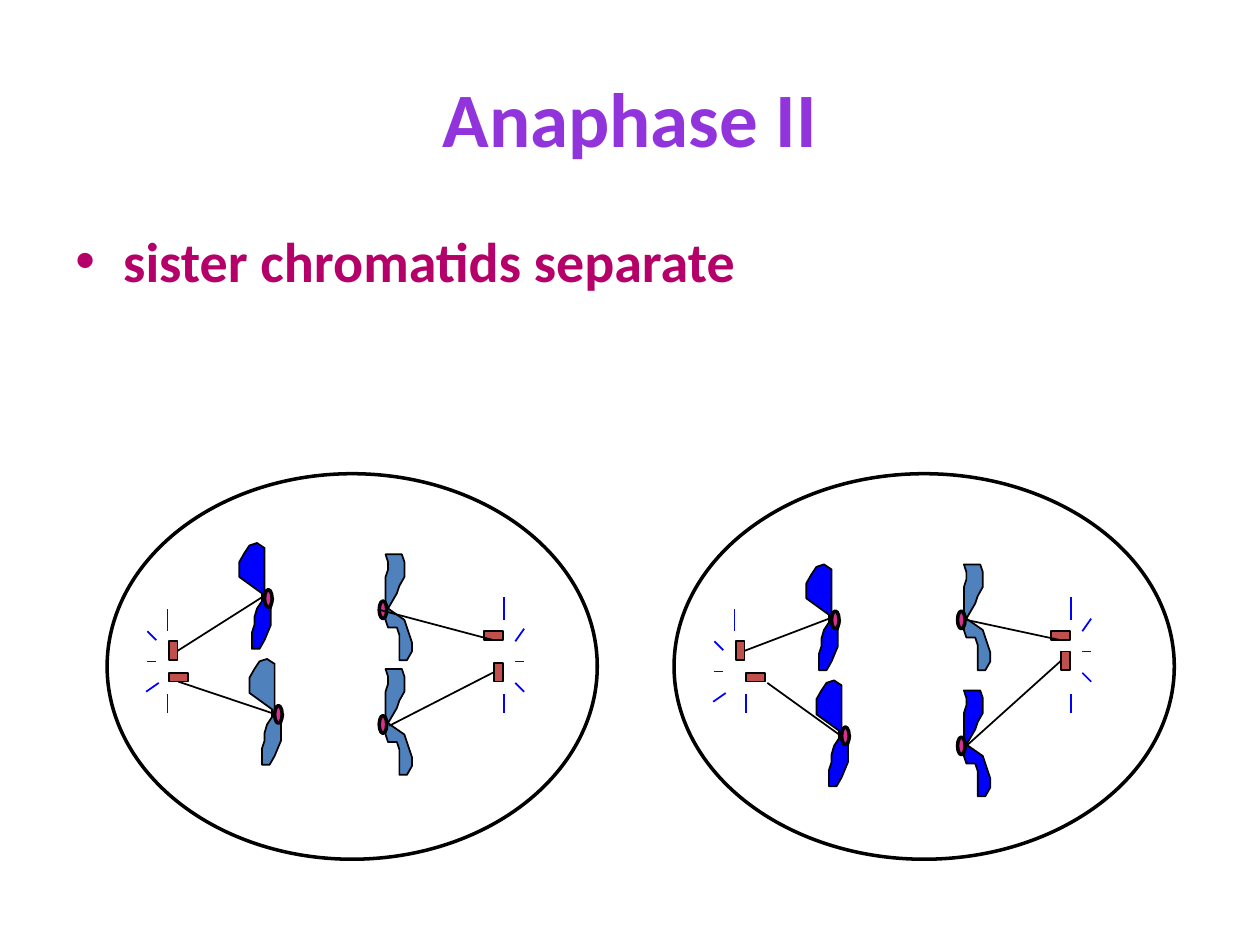
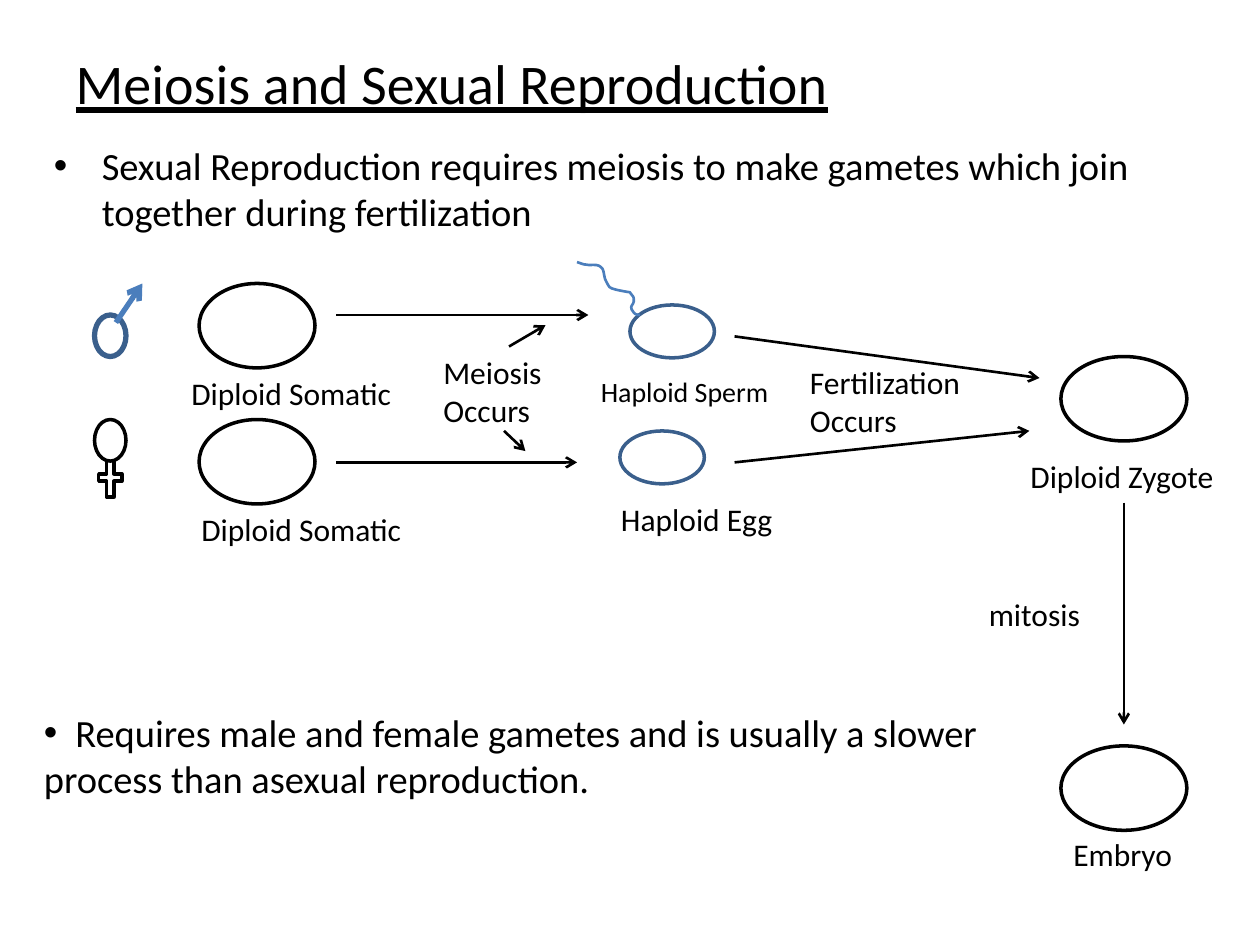
import pptx
import pptx.util
import pptx.dml.color
import pptx.enum.shapes
import pptx.enum.text
import pptx.oxml
import pptx.oxml.ns
import lxml.etree

Inches = pptx.util.Inches
Pt = pptx.util.Pt
Rgb = pptx.dml.color.RGBColor.from_string
Kind = pptx.enum.shapes.MSO_SHAPE
Align = pptx.enum.text.PP_ALIGN
qn = pptx.oxml.ns.qn
FONT = "Calibri"
HUES = {
    "ink": "000000", "paper": "FFFFFF", "title": "9234DB", "point": "B50069",
    "blue": "0000FF", "steel": "4F81BD", "rod": "C0504D", "knot": "D93192",
    "ring": "3A5F8C", "tail": "4B7EBC",
}


def paint(shape, fill, hue, width):
    shape.shadow.inherit = False
    if fill:
        shape.fill.solid()
        shape.fill.fore_color.rgb = Rgb(HUES[fill])
    else:
        shape.fill.background()
    shape.line.color.rgb = Rgb(HUES[hue])
    shape.line.width = Pt(width)


def link(slide, ends, hue, width, arrow=False):
    line = slide.shapes.add_connector(
        pptx.enum.shapes.MSO_CONNECTOR.STRAIGHT, *map(Inches, ends))
    line.line.color.rgb = Rgb(HUES[hue])
    line.line.width = Pt(width)
    props = line._element.spPr
    if arrow:
        head = lxml.etree.SubElement(props.find(qn("a:ln")), qn("a:tailEnd"))
        head.set("type", "arrow")
    lxml.etree.SubElement(props, qn("a:effectLst"))
    return line


deck = pptx.Presentation()
deck.slide_width, deck.slide_height = Inches(10), Inches(7.5)
titles = [
    ("Anaphase II", 1.25, 44, "title", True, False, Align.CENTER),
    ("Meiosis and Sexual Reproduction", 0.7, 32, "ink", False, True, Align.LEFT),
]
slides = []
for words, height, size, hue, bold, under, align in titles:
    slide = deck.slides.add_slide(deck.slide_layouts[5])
    title = slide.shapes.title
    title.left, title.top = Inches(0.5), Inches(0.3)
    title.width, title.height = Inches(9), Inches(height)
    title.text_frame.text = words
    title.text_frame.vertical_anchor = pptx.enum.text.MSO_ANCHOR.MIDDLE
    para = title.text_frame.paragraphs[0]
    para.alignment = align
    para.font.name, para.font.size = FONT, Pt(size)
    para.font.bold, para.font.underline = bold, under
    para.font.color.rgb = Rgb(HUES[hue])
    slides.append(slide)
split, cycle = slides

left_arm = [
    (0.27, 0.44), (0.2, 0.42), (0.2, 0.04), (0.14, 0), (0.08, 0.02), (0.04, 0.08),
    (0, 0.15), (0, 0.27), (0.18, 0.4), (0.18, 0.46), (0.14, 0.52), (0.12, 0.59),
    (0.12, 0.65), (0.1, 0.71), (0.1, 0.84), (0.16, 0.84), (0.2, 0.77),
    (0.25, 0.65), (0.25, 0.52),
]
right_arm = [
    (0.02, 0.43), (0, 0.37), (0, 0.18), (0.02, 0.12), (0.02, 0.06), (0, 0),
    (0.13, 0), (0.15, 0.06), (0.15, 0.18), (0.11, 0.25), (0.09, 0.31),
    (0.02, 0.43), (0.15, 0.52), (0.17, 0.58), (0.21, 0.7), (0.21, 0.77),
    (0.17, 0.84), (0.11, 0.84), (0.11, 0.64), (0.09, 0.58), (0.02, 0.58),
    (0, 0.52), (0, 0.45),
]
strands = [
    (1.98, 5.23, left_arm, 0.2, "steel"), (3.06, 5.31, right_arm, -0.05, "steel"),
    (6.4, 4.48, left_arm, 0.2, "blue"), (7.65, 4.48, right_arm, -0.05, "steel"),
    (1.9, 4.31, left_arm, 0.2, "blue"), (3.06, 4.4, right_arm, -0.05, "steel"),
    (6.48, 5.4, left_arm, 0.2, "blue"), (7.65, 5.48, right_arm, -0.05, "blue"),
]
for x, y, arm, shift, hue in strands:
    spots = [(Inches(x + dx), Inches(y + dy)) for dx, dy in arm]
    form = split.shapes.build_freeform(*spots[0])
    form.add_line_segments(spots[1:], close=True)
    paint(form.convert_to_shape(), hue, "ink", 1)
    knot = split.shapes.add_shape(
        Kind.OVAL, *map(Inches, (x + shift, y + 0.37, 0.06, 0.14)))
    paint(knot, "knot", "ink", 2)

for x, width in [(0.85, 3.89), (5.35, 3.97)]:
    cell = split.shapes.add_shape(Kind.OVAL, *map(Inches, (x, 3.76, width, 3.06)))
    paint(cell, None, "ink", 2)

west = [(-0.07, 0.17, -0.17, 0.24), (-0.16, 0, -0.09, 0), (-0.16, -0.24, -0.09, -0.17)]
east = [(0.09, -0.16, 0.16, -0.26), (0.09, 0, 0.16, 0), (0.09, 0.17, 0.16, 0.24)]
poles = [
    (1.33, 5.25, 5.01, 1.33, west), (4, 5.25, 4.92, 4, east),
    (5.83, 5.33, 5.01, 5.92, west), (8.5, 5.17, 4.92, 8.5, east),
]
for x, y, top, foot, fan in poles:
    rays = [(x + a, y + b, x + c, y + d) for a, b, c, d in fan]
    rays += [(x, top, x, top - 0.18), (foot, 5.51, foot, 5.66)]
    for ray in rays:
        link(split, ray, "blue", 1)

tall, flat = (0.07, 0.15), (0.15, 0.07)
rods = [
    (1.34, 5.09, tall, 3, (1.42, 5.17, 2.08, 4.74)),
    (1.34, 5.34, flat, 2, (1.42, 5.42, 2.16, 5.66)),
    (3.84, 5.01, flat, 2, (3.91, 5.08, 3.01, 4.84)),
    (3.92, 5.26, tall, 1, (3.91, 5.33, 3.09, 5.76)),
    (5.92, 5.34, flat, None, (6.09, 5.42, 6.66, 5.83)),
    (5.84, 5.09, tall, 3, (5.92, 5.17, 6.58, 4.91)),
    (8.34, 5.01, flat, 2, (8.41, 5.08, 7.67, 4.92)),
    (8.42, 5.17, tall, 1, (8.41, 5.24, 7.67, 5.92)),
]
for x, y, size, side, ends in rods:
    rod = split.shapes.add_shape(Kind.RECTANGLE, *map(Inches, (x, y, *size)))
    paint(rod, "rod", "ink", 1)
    fiber = link(split, ends, "ink", 1)
    if side is not None:
        fiber.begin_connect(rod, side)

cells = [
    (Kind.OVAL, (0.75, 2.5, 0.25, 0.33), "ring", 3),
    (Kind.MATH_PLUS, (0.75, 3.58, 0.25, 0.42), "ink", 2),
    (Kind.OVAL, (0.75, 3.33, 0.25, 0.33), "ink", 2),
    (Kind.OVAL, (1.58, 2.25, 0.92, 0.67), "ink", 2),
    (Kind.OVAL, (1.58, 3.33, 0.92, 0.67), "ink", 2),
    (Kind.OVAL, (5, 2.42, 0.67, 0.42), "ring", 2),
    (Kind.OVAL, (4.92, 3.42, 0.67, 0.42), "ring", 2),
    (Kind.OVAL, (8.42, 2.83, 1, 0.67), "ink", 2),
    (Kind.OVAL, (8.42, 5.92, 1, 0.67), "ink", 2),
]
for kind, box, hue, width in cells:
    paint(cycle.shapes.add_shape(kind, *map(Inches, box)), "paper", hue, width)

curves = [
    ((4.61, 2.09), (4.63, 2.1), (4.65, 2.1)),
    ((4.69, 2.11), (4.74, 2.09), (4.77, 2.12)),
    ((4.8, 2.14), (4.79, 2.2), (4.81, 2.23)),
    ((4.82, 2.25), (4.83, 2.27), (4.84, 2.28)),
    ((4.86, 2.3), (5, 2.32), (5, 2.32)),
    ((5.01, 2.34), (5.03, 2.35), (5.03, 2.37)),
    ((5.04, 2.43), (4.98, 2.42), (5.03, 2.48)),
    ((5.04, 2.5), (5.08, 2.5), (5.08, 2.5)),
]
start = (4.58, 2.08)
form = cycle.shapes.build_freeform(*map(Inches, start))
steps = 6
for one, two, end in curves:
    spots = []
    for step in range(1, steps + 1):
        t = step / steps
        u = 1 - t
        spots.append([
            Inches(u**3 * a + 3 * u * u * t * b + 3 * u * t * t * c + t**3 * d)
            for a, b, c, d in zip(start, one, two, end)])
    form.add_line_segments(spots, close=False)
    start = end
paint(form.convert_to_shape(), None, "tail", 1.5)

link(cycle, (0.92, 2.56, 1.13, 2.25), "tail", 3, True)
arrows = [
    (2.67, 2.5, 4.67, 2.5), (2.67, 3.67, 4.58, 3.67), (4.04, 2.75, 4.33, 2.58),
    (4, 3.42, 4.17, 3.58), (5.83, 2.67, 8.25, 3), (5.83, 3.67, 8.17, 3.42),
    (8.92, 3.99, 8.92, 5.75),
]
for ends in arrows:
    link(cycle, ends, "ink", 1.5, True)

labels = [
    ("Diploid Somatic", (1.42, 2.92, 1.92, 0.4), 18),
    ("Diploid Somatic", (1.5, 4, 1.92, 0.4), 18),
    ("Meiosis Occurs", (3.42, 2.75, 1.25, 0.71), 18),
    ("Haploid Sperm", (4.67, 2.92, 1.58, 0.37), 16),
    ("Haploid Egg", (4.83, 3.92, 1.42, 0.4), 18),
    ("Fertilization Occurs", (6.33, 2.83, 1.75, 0.71), 18),
    ("Diploid Zygote", (8.08, 3.58, 1.67, 0.4), 18),
    ("mitosis", (7.75, 4.67, 1, 0.4), 18),
    ("Embryo", (8.42, 6.58, 0.99, 0.4), 18),
]
texts = [(cycle, *label, "ink", None) for label in labels] + [
    (split, "sister chromatids separate", (0.5, 1.75, 9, 4.95), 32, "point", 0.38),
    (cycle, "Sexual Reproduction requires meiosis to make gametes which join "
     "together during fertilization", (0.33, 1.08, 9.25, 0.83), 22, "ink", 0.38),
    (cycle, "\tRequires male and female gametes and is usually a slower "
     "process than asexual reproduction.", (0.25, 5.58, 8.42, 0.84), 22, "ink", 0),
]
for slide, words, box, size, hue, hang in texts:
    frame = slide.shapes.add_textbox(*map(Inches, box)).text_frame
    frame.word_wrap = words != "Embryo"
    frame.text = words
    para = frame.paragraphs[0]
    para.font.name, para.font.size = FONT, Pt(size)
    para.font.bold = hue == "point"
    para.font.color.rgb = Rgb(HUES[hue])
    if hang is not None:
        props = para._p.get_or_add_pPr()
        props.set("marL", str(Inches(hang)))
        props.set("indent", str(-Inches(hang)))
        if hang:
            para.space_before = Pt(size * 0.2)
        mark = pptx.oxml.parse_xml(
            f'<a:pPr {pptx.oxml.ns.nsdecls("a")}><a:buFont typeface="Arial"/>'
            f'<a:buChar char="•"/><a:tabLst><a:tab pos="{Inches(0.25)}" algn="l"/>'
            '</a:tabLst></a:pPr>')
        rest = props.find(qn("a:defRPr"))
        for part in list(mark):
            rest.addprevious(part)

deck.save("out.pptx")
